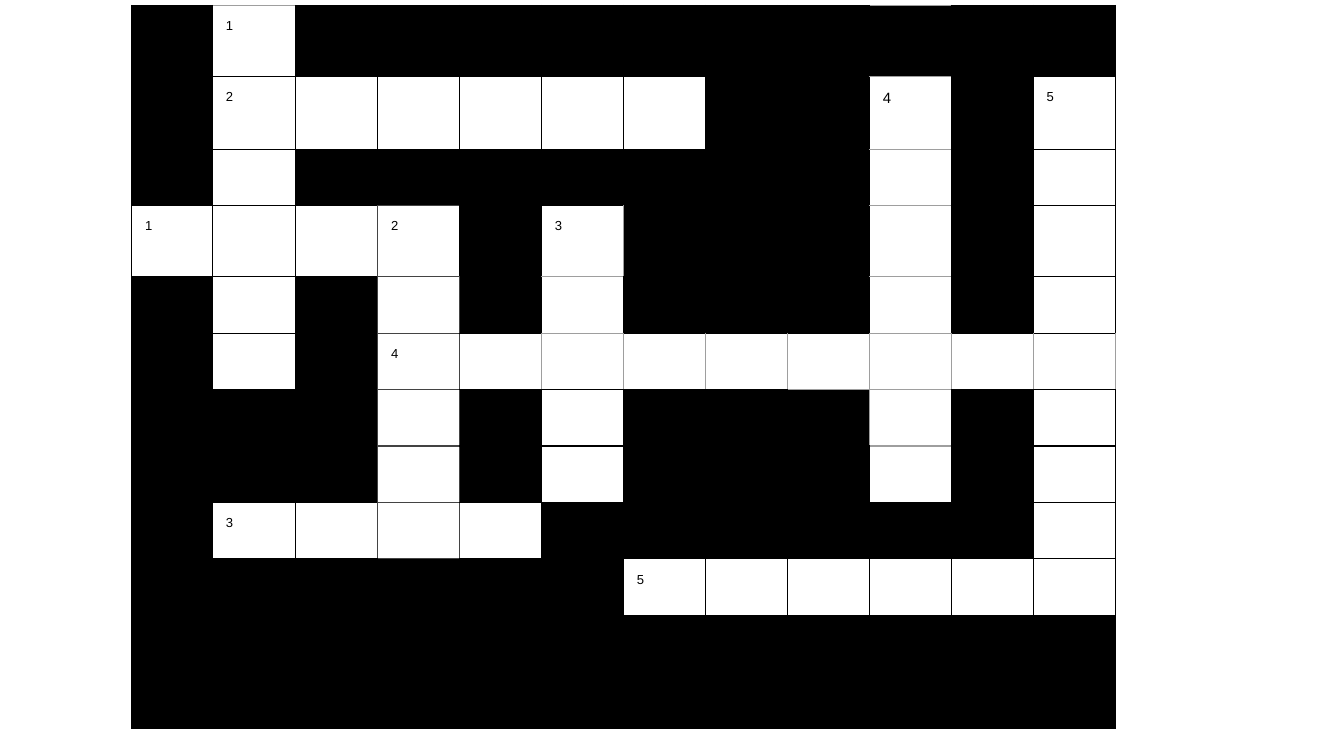
import pptx
import pptx.dml.color
import pptx.oxml
import pptx.oxml.ns
import pptx.util
from pptx.util import Inches

BLACK, WHITE, DARK, LIGHT = "000000", "FFFFFF", "434343", "9E9E9E"

# "#" is a blocked square, "." an open one, a digit an open one with a clue number
CROSSWORD = [
    "#1##########",
    "#2.....##4#5",
    "#.#######.#.",
    "1..2#3###.#.",
    "#.#.#.###.#.",
    "#.#4........",
    "###.#.###.#.",
    "###.#.###.#.",
    "#3...######.",
    "######5.....",
    "############",
    "############",
]
COLUMN_WIDTHS = [0.6, 0.62] + [0.61] * 10
ROW_HEIGHTS = [0.53, 0.54, 0.42, 0.53] + [0.42] * 8
CLUE_SIZES = {(1, 9): 8}

# Grid lines that are not black, keyed by (row, column)
LEFT_LINES = {
    **{(row, 3): DARK for row in range(3, 9)},
    **{(row, 4): DARK for row in range(4, 9)},
    **{(5, column): LIGHT for column in range(5, 13)},
    (3, 6): LIGHT,
    (6, 9): LIGHT,
}
TOP_LINES = {
    **{(row, 3): DARK for row in range(3, 10)},
    **{(row, 9): LIGHT for row in range(8)},
    **{square: LIGHT for square in [(0, 1), (4, 5), (5, 5), (6, 8)]},
}


def rgb(value):
    return pptx.dml.color.RGBColor.from_string(value)


class CrosswordSlide:
    font = "Arial"
    clue_size = 7
    line_width = 0.75
    inset = 0.1

    def __init__(self, deck):
        self.slide = deck.slides.add_slide(deck.slide_layouts[6])

    def grid(self, left, top, squares, widths, heights):
        frame = self.slide.shapes.add_table(
            len(heights), len(widths), Inches(left), Inches(top),
            Inches(sum(widths)), Inches(sum(heights)))
        table = frame.table
        table.first_row = table.horz_banding = False
        for column, width in zip(table.columns, widths):
            column.width = Inches(width)
        for row, height in zip(table.rows, heights):
            row.height = Inches(height)
        for r, line in enumerate(squares):
            for c, mark in enumerate(line):
                self.square(table.cell(r, c), r, c, mark)

    def square(self, cell, row, column, mark):
        self.borders(cell, row, column)
        cell.fill.solid()
        cell.fill.fore_color.rgb = rgb(BLACK if mark == "#" else WHITE)
        if mark.isdigit():
            self.clue(cell, mark, CLUE_SIZES.get((row, column), self.clue_size))

    def clue(self, cell, number, size):
        cell.margin_left = cell.margin_right = Inches(self.inset)
        cell.margin_top = cell.margin_bottom = Inches(self.inset)
        run = cell.text_frame.paragraphs[0].add_run()
        run.text = number
        run.font.name = self.font
        run.font.size = pptx.util.Pt(size)
        run.font.color.rgb = rgb(BLACK)

    def borders(self, cell, row, column):
        """Neighbouring squares look up the same line, so shared edges agree."""
        sides = {
            "lnL": LEFT_LINES.get((row, column), BLACK),
            "lnR": LEFT_LINES.get((row, column + 1), BLACK),
            "lnT": TOP_LINES.get((row, column), BLACK),
            "lnB": TOP_LINES.get((row + 1, column), BLACK),
        }
        properties = cell._tc.get_or_add_tcPr()
        for tag, color in sides.items():
            properties.append(pptx.oxml.parse_xml(
                f'<a:{tag} {pptx.oxml.ns.nsdecls("a")} w="{pptx.util.Pt(self.line_width)}">'
                f'<a:solidFill><a:srgbClr val="{color}"/></a:solidFill></a:{tag}>'))


def main():
    deck = pptx.Presentation()
    deck.slide_width = Inches(10)
    deck.slide_height = deck.slide_width * 9 // 16
    slide = CrosswordSlide(deck)
    slide.grid(0.98, 0.04, CROSSWORD, COLUMN_WIDTHS, ROW_HEIGHTS)
    deck.save("out.pptx")


if __name__ == "__main__":
    main()
